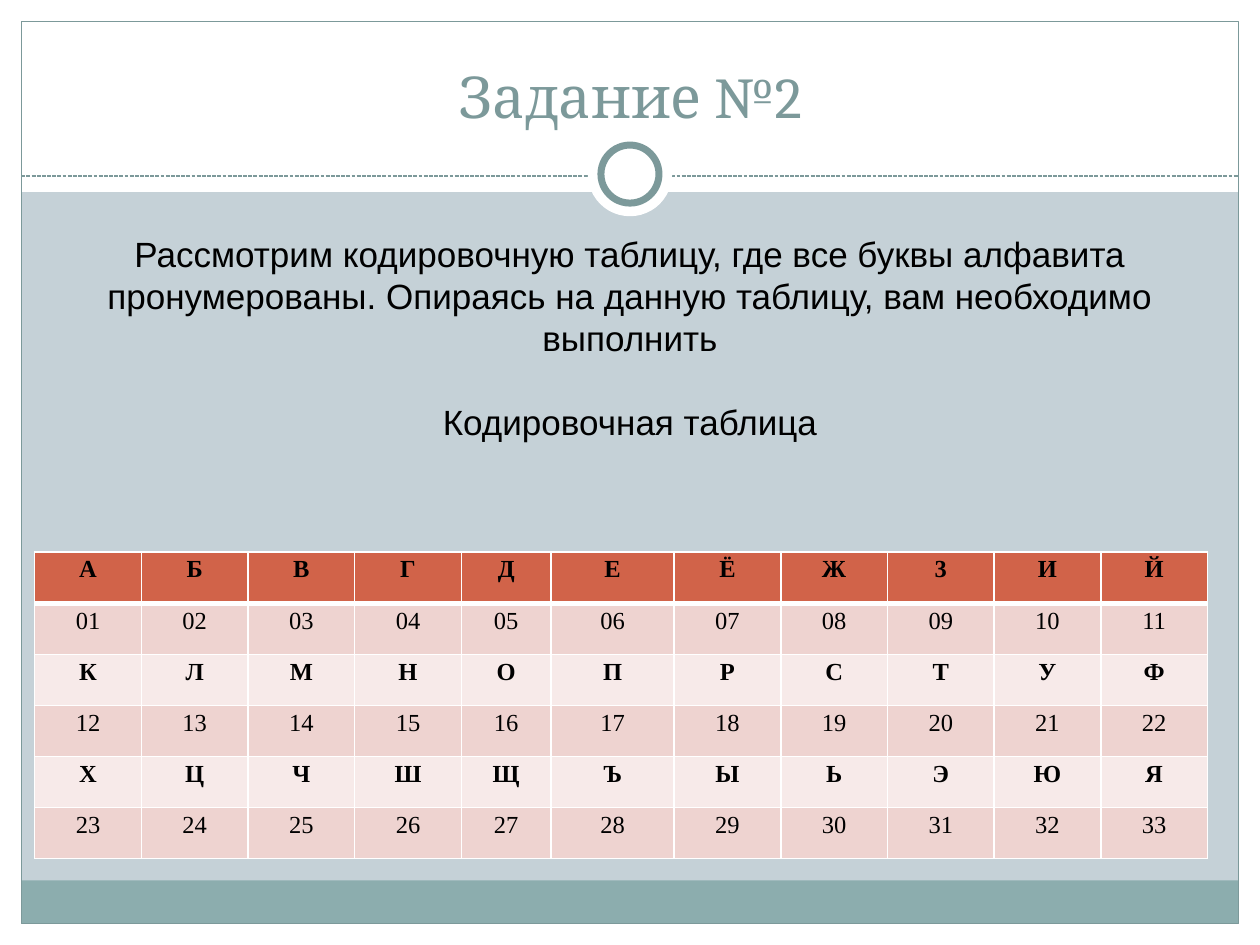
import lxml.etree
import pptx
import pptx.dml.color
import pptx.enum.dml
import pptx.enum.shapes
import pptx.enum.text
import pptx.oxml.ns
import pptx.util

Cm = pptx.util.Cm
Pt = pptx.util.Pt
SHAPES = pptx.enum.shapes.MSO_SHAPE
ANCHORS = pptx.enum.text.MSO_ANCHOR
qn = pptx.oxml.ns.qn

COLORS = {
    "background": "C5D1D7",
    "white": "FFFFFF",
    "footer": "8CADAE",
    "accent": "7C999A",
    "text": "000000",
    "header": "D16349",
    "numbers": "EED3D0",
    "letters": "F7EAE9",
}
WIDTH, HEIGHT = 25.4, 19.05
MARGIN = 0.43
LETTER_ROWS = [
    ["А", "Б", "В", "Г", "Д", "Е", "Ё", "Ж", "3", "И", "Й"],
    list("КЛМНОПРСТУФ"),
    list("ХЦЧШЩЪЫЬЭЮЯ"),
]
INTRODUCTION = (
    "Рассмотрим кодировочную таблицу, где все буквы алфавита пронумерованы. "
    "Опираясь на данную таблицу, вам необходимо выполнить"
)


def rgb(name):
    return pptx.dml.color.RGBColor.from_string(COLORS[name])


def add_figure(slide, kind, box, fill=None, line=None, line_width=0.75):
    shape = slide.shapes.add_shape(kind, *map(Cm, box))
    shape.shadow.inherit = False
    if fill:
        shape.fill.solid()
        shape.fill.fore_color.rgb = rgb(fill)
    else:
        shape.fill.background()
    if line:
        shape.line.color.rgb = rgb(line)
        shape.line.width = Pt(line_width)
    else:
        shape.line.fill.background()


def add_circle(slide, center_y, diameter, **style):
    """Add a white circle centred across the slide."""
    box = ((WIDTH - diameter) / 2, center_y - diameter / 2, diameter, diameter)
    add_figure(slide, SHAPES.OVAL, box, "white", **style)


def add_dashed_line(slide, y):
    connector = slide.shapes.add_connector(
        pptx.enum.shapes.MSO_CONNECTOR.STRAIGHT,
        Cm(MARGIN), Cm(y), Cm(WIDTH - MARGIN), Cm(y),
    )
    connector.line.color.rgb = rgb("accent")
    connector.line.width = Pt(0.75)
    connector.line.dash_style = pptx.enum.dml.MSO_LINE.SQUARE_DOT
    properties = connector.element.find(qn("p:spPr"))
    lxml.etree.SubElement(properties, qn("a:effectLst"))


def format_paragraph(paragraph, font_name, size, color, bold=False):
    paragraph.alignment = pptx.enum.text.PP_ALIGN.CENTER
    for run in paragraph.runs:
        run.font.name = font_name
        run.font.size = Pt(size)
        run.font.bold = bold
        run.font.color.rgb = rgb(color)


def add_text(slide, box, text, anchor, font_name, size, color):
    """Add a centred text box and return its paragraphs."""
    text_frame = slide.shapes.add_textbox(*map(Cm, box)).text_frame
    text_frame.word_wrap = True
    text_frame.vertical_anchor = anchor
    text_frame.text = text
    for paragraph in text_frame.paragraphs:
        format_paragraph(paragraph, font_name, size, color)
    return text_frame.paragraphs


def set_borders(cell, widths):
    """Draw white cell borders; widths maps a side (L, R, T, B) to points."""
    properties = cell._tc.get_or_add_tcPr()
    for side, width in widths.items():
        line = lxml.etree.SubElement(properties, qn(f"a:ln{side}"), w=str(Pt(width)))
        fill = lxml.etree.SubElement(line, qn("a:solidFill"))
        lxml.etree.SubElement(fill, qn("a:srgbClr"), val=COLORS["white"])


def format_cell(cell, text, fill, bold, borders):
    set_borders(cell, borders)
    cell.fill.solid()
    cell.fill.fore_color.rgb = rgb(fill)
    cell.margin_left = cell.margin_right = Cm(0.18)
    cell.margin_top = cell.margin_bottom = 0
    cell.text = text
    paragraph = cell.text_frame.paragraphs[0]
    paragraph.line_spacing = 1.15
    format_paragraph(paragraph, "Times New Roman", 14, "text", bold)


def add_code_table(slide):
    """Add rows of letters, each followed by a row of their numbers."""
    column_widths = [2.15] * 4 + [1.81, 2.48] + [2.15] * 5
    row_height = 1.03
    row_count, column_count = 2 * len(LETTER_ROWS), len(column_widths)
    table = slide.shapes.add_table(
        row_count, column_count, Cm(0.7), Cm(11.13),
        Cm(sum(column_widths)), Cm(row_height * row_count),
    ).table
    table.horz_banding = False
    for column, width in zip(table.columns, column_widths):
        column.width = Cm(width)
    for row_index, row in enumerate(table.rows):
        row.height = Cm(row_height)
        group, is_number = divmod(row_index, 2)
        fill = "numbers" if is_number else "letters" if group else "header"
        borders = {
            "L": 1, "R": 1,
            "T": 3 if row_index == 1 else 1,
            "B": 3 if row_index == 0 else 1,
        }
        for column_index, letter in enumerate(LETTER_ROWS[group]):
            number = group * column_count + column_index + 1
            text = f"{number:02d}" if is_number else letter
            format_cell(row.cells[column_index], text, fill, not is_number, borders)


def add_frame(slide):
    """Add the white margins, footer band, outline and ring of the theme."""
    inner_width = WIDTH - 2 * MARGIN
    bands = [
        ((0, HEIGHT - MARGIN, WIDTH, MARGIN), "white"),
        ((0, 0, WIDTH, 3.87), "white"),
        ((0, 0, MARGIN, HEIGHT), "white"),
        ((WIDTH - MARGIN, 0, MARGIN, HEIGHT), "white"),
        ((MARGIN, 17.75, inner_width, 0.87), "footer"),
    ]
    for box, fill in bands:
        add_figure(slide, SHAPES.RECTANGLE, box, fill)
    outline = (MARGIN, MARGIN, inner_width, HEIGHT - 2 * MARGIN)
    add_figure(slide, SHAPES.RECTANGLE, outline, line="accent")
    add_dashed_line(slide, 3.55)
    add_circle(slide, 3.51, 1.7)
    add_circle(slide, 3.51, 1.17, line="accent", line_width=4)


def main():
    presentation = pptx.Presentation()
    presentation.slide_width = Cm(WIDTH)
    presentation.slide_height = Cm(HEIGHT)
    slide = presentation.slides.add_slide(presentation.slide_layouts[6])
    slide.background.fill.solid()
    slide.background.fill.fore_color.rgb = rgb("background")

    add_frame(slide)
    add_text(slide, (0.85, 0.64, 23.7, 2.1), "Задание №2",
             ANCHORS.BOTTOM, "Cambria", 33, "accent")
    add_code_table(slide)
    paragraphs = add_text(
        slide, (1.1, 4.55, 23.2, 4.52), f"{INTRODUCTION}\nКодировочная таблица",
        ANCHORS.MIDDLE, "Arial", 20, "text",
    )
    for paragraph in paragraphs:
        paragraph.line_spacing = Pt(24)
    paragraphs[-1].space_before = Pt(24)

    presentation.save("out.pptx")


if __name__ == "__main__":
    main()
